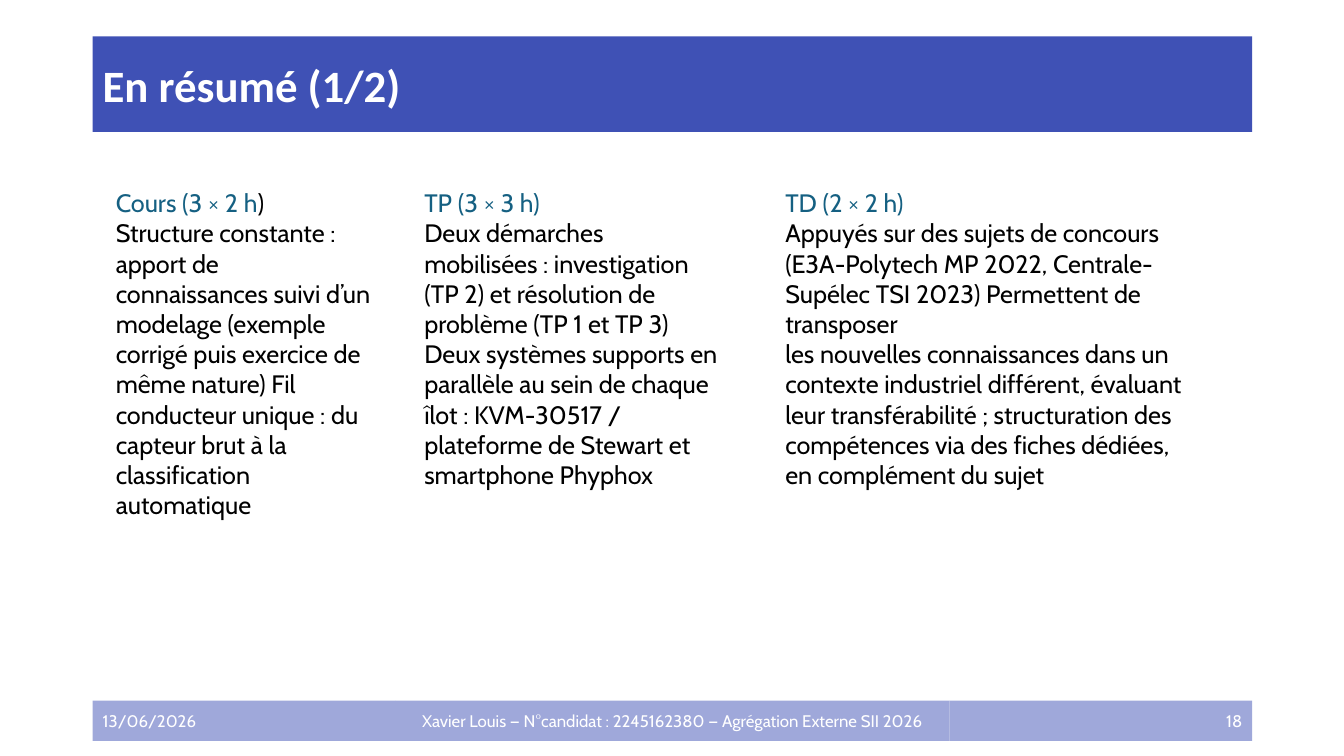
from pptx import Presentation
from pptx.dml.color import RGBColor
from pptx.enum.shapes import MSO_SHAPE
from pptx.enum.text import MSO_ANCHOR, MSO_AUTO_SIZE, PP_ALIGN
from pptx.util import Emu, Pt

PX = 9144  # 100 px to the inch
INDIGO = RGBColor(0x3F, 0x51, 0xB5)
LILAC = RGBColor(0x9F, 0xA8, 0xDA)
TEAL = RGBColor(0x15, 0x60, 0x82)
WHITE = RGBColor(0xFF, 0xFF, 0xFF)
BLACK = RGBColor(0, 0, 0)


class Deck:
    body = "Cabin"
    head = "Calibri"

    def __init__(self, width, height):
        self.prs = Presentation()
        self.prs.slide_width = Emu(width * PX)
        self.prs.slide_height = Emu(height * PX)
        self.slide = self.prs.slides.add_slide(self.prs.slide_layouts[6])

    def run(self, para, text, size, color, font=None, bold=False):
        run = para.add_run()
        run.text = text
        run.font.name = font or self.body
        run.font.size = Pt(size)
        run.font.bold = bold
        run.font.color.rgb = color

    def bar(self, box, fill, text, size=12, align=PP_ALIGN.LEFT, font=None, bold=False):
        shape = self.slide.shapes.add_shape(
            MSO_SHAPE.RECTANGLE, *(Emu(n * PX) for n in box))
        shape.shadow.inherit = False
        shape.fill.solid()
        shape.fill.fore_color.rgb = fill
        shape.line.fill.background()
        frame = shape.text_frame
        frame.word_wrap = True
        frame.vertical_anchor = MSO_ANCHOR.MIDDLE
        para = frame.paragraphs[0]
        para.alignment = align
        self.run(para, text, size, WHITE, font, bold)

    def column(self, box, paras):
        """Add a text box; each paragraph is a list of (text, color) runs."""
        shape = self.slide.shapes.add_textbox(*(Emu(n * PX) for n in box))
        frame = shape.text_frame
        frame.word_wrap = True
        frame.auto_size = MSO_AUTO_SIZE.SHAPE_TO_FIT_TEXT
        for i, runs in enumerate(paras):
            para = frame.add_paragraph() if i else frame.paragraphs[0]
            for text, color in runs:
                self.run(para, text, 18, color)


FOOTER = [
    (300, "13/06/2026", PP_ALIGN.LEFT),
    (550, "Xavier Louis — N°candidat : 2245162380 — Agrégation Externe SII 2026",
     PP_ALIGN.CENTER),
    (300, "18", PP_ALIGN.RIGHT),
]

COLUMNS = [
    (105, 273, 343, [
        [("Cours (3 × 2 h", TEAL), (")", BLACK)],
        [("Structure constante :", BLACK)],
        [("apport de connaissances suivi d’un modelage (exemple corrigé puis "
          "exercice de même nature) Fil conducteur unique : du capteur brut à la "
          "classification automatique", BLACK)],
    ]),
    (411, 312, 313, [
        [("TP (3 × 3 h)", TEAL)],
        [("Deux démarches mobilisées : investigation (TP 2) et résolution de "
          "problème (TP 1 et TP 3) Deux systèmes supports en parallèle au sein de "
          "chaque îlot : KVM-30517 / plateforme de Stewart et smartphone Phyphox",
          BLACK)],
    ]),
    (769, 429, 313, [
        [("TD (2 × 2 h)", TEAL)],
        [("Appuyés sur des sujets de concours (E3A-Polytech MP 2022, "
          "Centrale-Supélec TSI 2023) Permettent de transposer", BLACK)],
        [("les nouvelles connaissances dans un contexte industriel différent, "
          "évaluant leur transférabilité ; structuration des", BLACK)],
        [("compétences via des fiches dédiées, en complément du sujet", BLACK)],
    ]),
]


def main():
    deck = Deck(1333, 750)
    deck.bar((92, 36, 1150, 95), INDIGO, "En résumé (1/2)", 32,
             font=deck.head, bold=True)
    left = 92
    for width, text, align in FOOTER:
        deck.bar((left, 695, width, 40), LILAC, text, align=align)
        left += width
    for left, width, height, paras in COLUMNS:
        deck.column((left, 181, width, height), paras)
    deck.prs.save("out.pptx")


if __name__ == "__main__":
    main()
